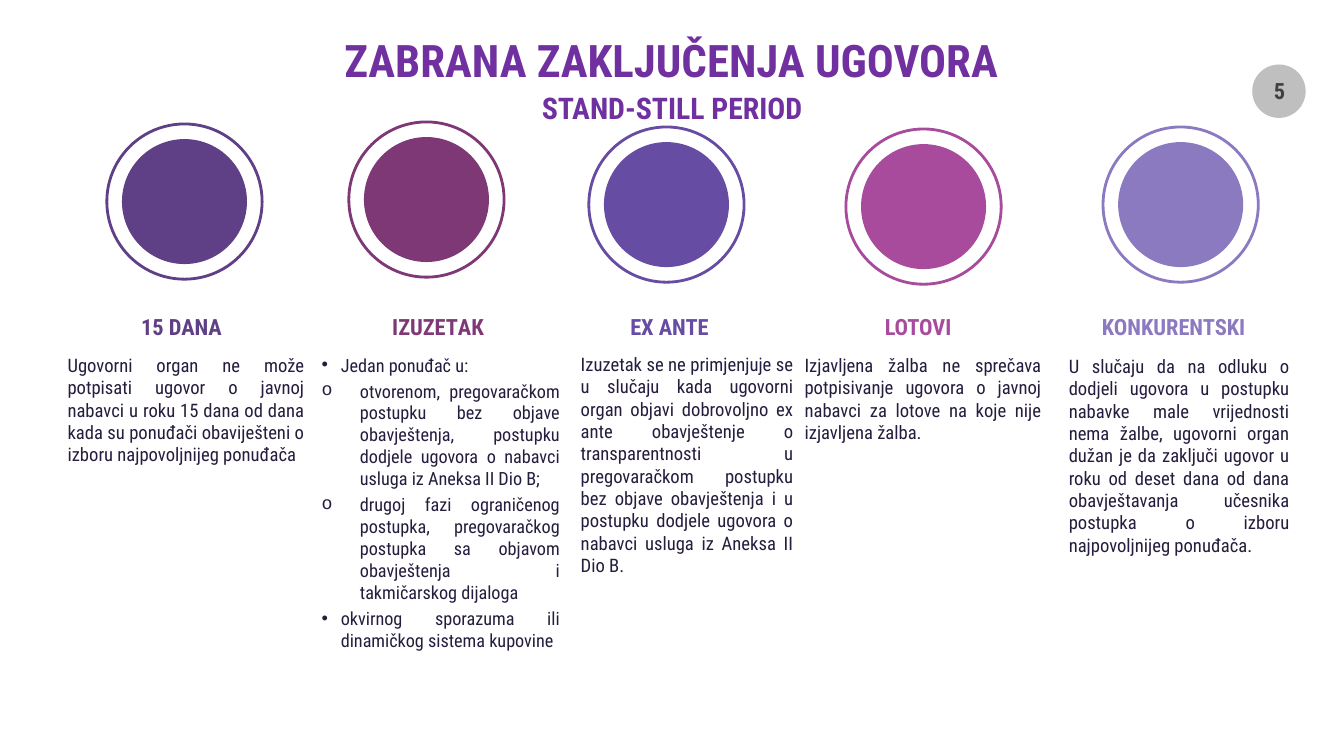
from lxml import etree
from pptx import Presentation
from pptx.dml.color import RGBColor
from pptx.enum import shapes, text
from pptx.oxml import ns
from pptx.util import Inches, Pt

FONT = "Roboto Condensed"
TITLE_COLOR = RGBColor(0x70, 0x30, 0xA0)
BODY_COLOR = RGBColor(0x26, 0x1C, 0x3D)
BADGE_FILL = RGBColor(0xBF, 0xBF, 0xBF)
BADGE_TEXT = RGBColor(0x40, 0x40, 0x40)
PLUM = RGBColor(0x5F, 0x3F, 0x85)
WINE = RGBColor(0x7E, 0x38, 0x75)
INDIGO = RGBColor(0x66, 0x4C, 0xA3)
MAGENTA = RGBColor(0xA8, 0x4B, 0x9C)
LAVENDER = RGBColor(0x8B, 0x7A, 0xC0)

TITLE = "ZABRANA ZAKLJUČENJA UGOVORA"
SUBTITLE = "STAND-STILL PERIOD"
PAGE_NUMBER = "5"

COLUMNS = [
    dict(heading="15 DANA", color=PLUM, ring=(1.06, 1.23), label=(1.32, 1.06),
         body=(0.67, 3.51, 2.35, 1.35), size=13.3, lines=[
             ("", "Ugovorni organ ne može potpisati ugovor o javnoj nabavci u roku 15 dana "
                  "od dana kada su ponuđači obaviješteni o izboru najpovoljnijeg ponuđača")]),
    dict(heading="IZUZETАК", color=WINE, ring=(3.46, 1.21), label=(3.81, 1.17),
         body=(3.19, 3.51, 2.36, 3.85), size=13, lines=[
             ("•", "Jedan ponuđač u:"),
             ("o", "otvorenom, pregovaračkom postupku bez objave obavještenja, postupku "
                   "dodjele ugovora o nabavci usluga iz Aneksa II Dio B;"),
             ("o", "drugoj fazi ograničenog postupka, pregovaračkog postupka sa objavom "
                   "obavještenja i takmičarskog dijaloga"),
             ("•", "okvirnog sporazuma ili dinamičkog sistema kupovine")]),
    dict(heading="EX ANTE", color=INDIGO, ring=(5.84, 1.26), label=(6.16, 1.06),
         body=(5.76, 3.5, 2.11, 2.47), size=13.3, lines=[
             ("", "Izuzetak se ne primjenjuje se u slučaju kada ugovorni organ objavi "
                  "dobrovoljno ex ante obavještenje o transparentnosti u pregovaračkom "
                  "postupku bez objave obavještenja i u postupku dodjele ugovora o nabavci "
                  "usluga iz Aneksa II Dio B.")]),
    dict(heading="LOTOVI", color=MAGENTA, ring=(8.39, 1.28), label=(8.69, 0.93),
         body=(7.98, 3.51, 2.35, 0.9), size=13.3, lines=[
             ("", "Izjavljena žalba ne sprečava potpisivanje ugovora o javnoj nabavci za "
                  "lotove na koje nije izjavljena žalba.")]),
    dict(heading="KONKURENTSKI", color=LAVENDER, ring=(10.94, 1.26), label=(10.74, 1.9),
         body=(10.6, 3.52, 2.19, 2.24), size=13.3, lines=[
             ("", "U slučaju da na odluku o dodjeli ugovora u postupku nabavke male "
                  "vrijednosti nema žalbe, ugovorni organ dužan je da zaključi ugovor u roku "
                  "od deset dana od dana obavještavanja učesnika postupka o izboru "
                  "najpovoljnijeg ponuđača.")]),
]

RING_SIZE, DISC_SIZE = 1.54, 1.24
LABEL_TOP, LABEL_HEIGHT = 3.06, 0.37
BULLETS = {"•": ("Arial", 0.19), "o": ("Courier New", 0.38)}


def set_bullet(para, mark):
    props = para._p.get_or_add_pPr()
    if not mark:
        props.set("marL", "0")
        props.set("indent", "0")
        etree.SubElement(props, ns.qn("a:buNone"))
        return
    typeface, indent = BULLETS[mark]
    props.set("marL", str(Inches(indent)))
    props.set("indent", str(-Inches(indent)))
    etree.SubElement(props, ns.qn("a:buFont"), typeface=typeface)
    etree.SubElement(props, ns.qn("a:buChar"), char=mark)


def fill_text(box, lines, size, color, bold=True, align=text.PP_ALIGN.CENTER,
              insets=(0, 0, 0, 0), anchor=text.MSO_ANCHOR.TOP, wrap=True):
    frame = box.text_frame
    frame.auto_size = text.MSO_AUTO_SIZE.NONE
    frame.word_wrap = wrap
    frame.vertical_anchor = anchor
    (frame.margin_left, frame.margin_top,
     frame.margin_right, frame.margin_bottom) = map(Inches, insets)
    for index, (mark, line) in enumerate(lines):
        para = frame.add_paragraph() if index else frame.paragraphs[0]
        para.text = line
        set_bullet(para, mark)
        para.alignment = align
        para.space_before = Pt(3 if index else 0)
        para.font.name = FONT
        para.font.size = Pt(size)
        para.font.bold = bold
        para.font.color.rgb = color


def place(box, *bounds):
    box.left, box.top, box.width, box.height = map(Inches, bounds)
    return box


def add_circle(page, left, top, size, fill=None, line=None):
    circle = page.shapes.add_shape(
        shapes.MSO_SHAPE.OVAL, *map(Inches, (left, top, size, size)))
    circle.shadow.inherit = False
    if fill:
        circle.fill.solid()
        circle.fill.fore_color.rgb = fill
    else:
        circle.fill.background()
    if line:
        circle.line.color.rgb = line
        circle.line.width = Pt(2)
    else:
        circle.line.fill.background()


def add_text(page, bounds, *args, **options):
    fill_text(page.shapes.add_textbox(*map(Inches, bounds)), *args, **options)


def add_column(page, column):
    left, top = column["ring"]
    gap = (RING_SIZE - DISC_SIZE) / 2
    add_circle(page, left + gap, top + gap, DISC_SIZE, fill=column["color"])
    add_circle(page, left, top, RING_SIZE, line=column["color"])
    add_text(page, column["body"], column["lines"], column["size"], BODY_COLOR,
             bold=False, align=text.PP_ALIGN.JUSTIFY)
    label_left, label_width = column["label"]
    add_text(page, (label_left, LABEL_TOP, label_width, LABEL_HEIGHT),
             [("", column["heading"])], 16, column["color"],
             insets=(0, 0.05, 0.1, 0.05), wrap=False)


def main():
    deck = Presentation()
    deck.slide_width, deck.slide_height = Inches(13.33), Inches(7.5)
    page = deck.slides.add_slide(deck.slide_layouts[1])
    middle = text.MSO_ANCHOR.MIDDLE
    fill_text(place(page.shapes.title, 3.19, 0.29, 6.94, 0.61),
              [("", TITLE)], 32, TITLE_COLOR, anchor=middle, wrap=False)
    fill_text(place(page.placeholders[1], 4.77, 0.92, 3.79, 0.29),
              [("", SUBTITLE)], 21.3, TITLE_COLOR, anchor=middle)
    add_circle(page, 12.42, 0.64, 0.53, fill=BADGE_FILL)
    add_text(page, (12.38, 0.66, 0.62, 0.48), [("", PAGE_NUMBER)], 16, BADGE_TEXT,
             insets=(0.13, 0.07, 0.13, 0.07), anchor=middle)
    for column in COLUMNS:
        add_column(page, column)
    deck.save("out.pptx")


if __name__ == "__main__":
    main()
